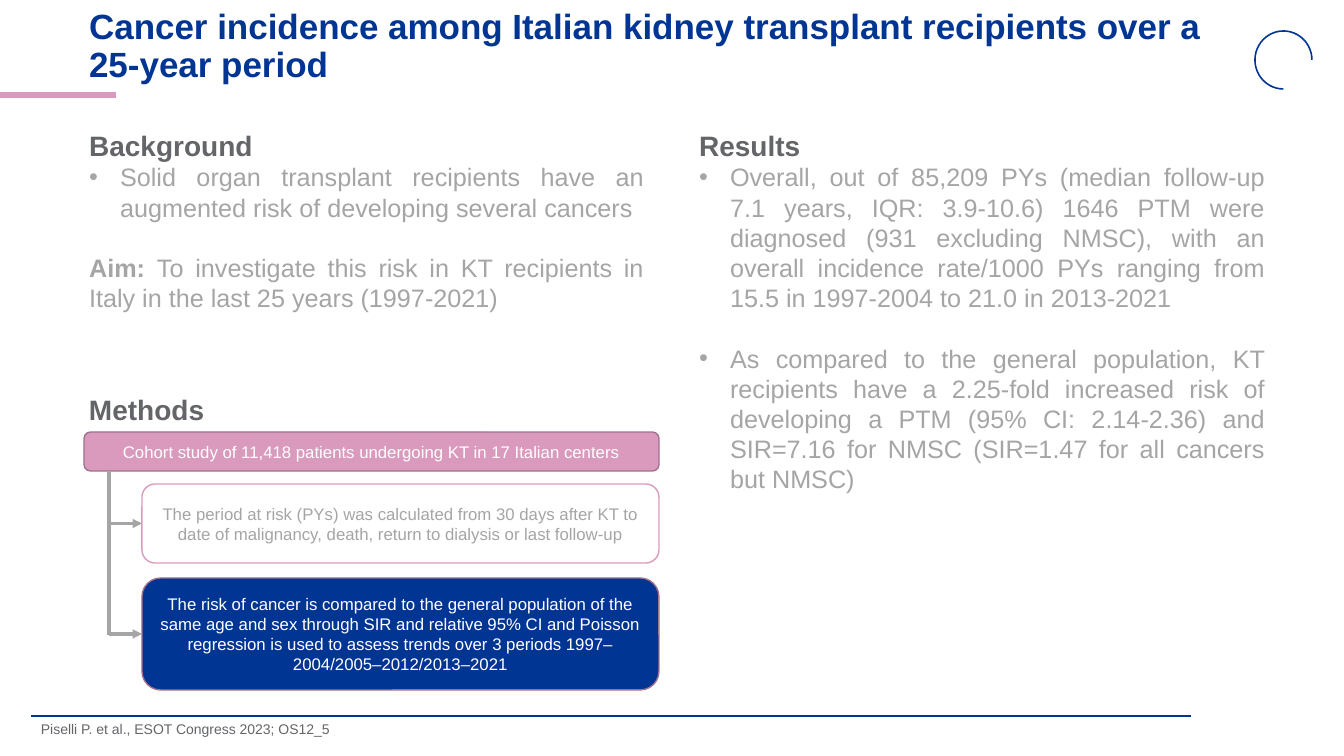
from dataclasses import dataclass

from lxml.etree import SubElement
from pptx import Presentation
from pptx.dml.color import RGBColor
from pptx.enum.shapes import MSO_CONNECTOR, MSO_SHAPE
from pptx.enum.text import MSO_ANCHOR, MSO_AUTO_SIZE, PP_ALIGN
from pptx.oxml.ns import qn
from pptx.util import Pt

# Content: a paragraph is (kind, [(text, bold), ...])
TITLE = "Cancer incidence among Italian kidney transplant recipients over a 25-year period"
CITATION = "Piselli P. et al., ESOT Congress 2023; OS12_5"
BACKGROUND = [
    ("heading", [("Background", True)]),
    ("bullet", [("Solid organ transplant recipients have an augmented risk of "
                 "developing several cancers", False)]),
    ("plain", [("Aim: ", True),
               ("To investigate this risk in KT recipients in Italy in the last "
                "25 years (1997-2021)", False)]),
]
METHODS = [("heading", [("Methods", True)])]
RESULTS = [
    ("heading", [("Results", True)]),
    ("bullet", [("Overall, out of 85,209 PYs (median follow-up 7.1 years, IQR: 3.9-10.6) "
                 "1646 PTM were diagnosed (931 excluding NMSC), with an overall incidence "
                 "rate/1000 PYs ranging from 15.5 in 1997-2004 to 21.0 in 2013-2021", False)]),
    ("bullet", [("As compared to the general population, KT recipients have a 2.25-fold "
                 "increased risk of developing a PTM (95% CI: 2.14-2.36) and SIR=7.16 for "
                 "NMSC (SIR=1.47 for all cancers but NMSC)", False)]),
]
COHORT = "Cohort study of 11,418 patients undergoing KT in 17 Italian centers"
# Step: top, height, fill, outline, text colour, text
STEPS = [
    (484, 79, None, "pink", "light_grey",
     "The period at risk (PYs) was calculated from 30 days after KT to date of "
     "malignancy, death, return to dialysis or last follow-up"),
    (578, 112, "blue", "mauve", "white",
     "The risk of cancer is compared to the general population of the same age and sex "
     "through SIR and relative 95% CI and Poisson regression is used to assess trends "
     "over 3 periods 1997‒2004/2005‒2012/2013‒2021"),
]


@dataclass(frozen=True)
class Theme:
    font: str = "Arial"
    blue: RGBColor = RGBColor(0x00, 0x35, 0x94)
    pink: RGBColor = RGBColor(0xDA, 0x9A, 0xBD)
    mauve: RGBColor = RGBColor(0xA1, 0x72, 0x8C)
    dark_grey: RGBColor = RGBColor(0x63, 0x65, 0x69)
    light_grey: RGBColor = RGBColor(0xA5, 0xA5, 0xA5)
    white: RGBColor = RGBColor(0xFF, 0xFF, 0xFF)
    title_size: int = 25
    heading_size: int = 20
    body_size: int = 18
    step_size: int = 12
    citation_size: int = 10


THEME = Theme()

# Geometry in px
SCALE = 914400 / 100.8
SLIDE_WIDTH, SLIDE_HEIGHT = 1344, 756
TEXT_LEFT = 79
STEP_LEFT, STEP_RIGHT = 142, 659
COHORT_LEFT, COHORT_TOP, COHORT_HEIGHT = 84, 432, 39
TRUNK_X = 109
BULLET_INDENT = 31
PARAGRAPH_GAP = 30


def px(length):
    return round(length * SCALE)


def place(shape, left, top, width, height):
    shape.left, shape.top = px(left), px(top)
    shape.width, shape.height = px(width), px(height)


def format_runs(paragraph, size, color, bold=False):
    for run in paragraph.runs:
        run.font.name = THEME.font
        run.font.size = Pt(size)
        run.font.bold = bold
        run.font.color.rgb = color


def set_bullet(paragraph, bulleted):
    properties = paragraph._p.get_or_add_pPr()
    indent = px(BULLET_INDENT) if bulleted else 0
    properties.set("marL", str(indent))
    properties.set("indent", str(-indent))
    if bulleted:
        SubElement(properties, qn("a:buFont")).set("typeface", THEME.font)
        SubElement(properties, qn("a:buChar")).set("char", "•")
    else:
        SubElement(properties, qn("a:buNone"))


def fill_frame(text_frame, paragraphs):
    text_frame.word_wrap = True
    text_frame.auto_size = MSO_AUTO_SIZE.NONE
    for index, (kind, pieces) in enumerate(paragraphs):
        paragraph = text_frame.add_paragraph() if index else text_frame.paragraphs[0]
        set_bullet(paragraph, kind == "bullet")
        paragraph.alignment = PP_ALIGN.JUSTIFY
        paragraph.space_before = px(PARAGRAPH_GAP) if index > 1 else 0
        heading = kind == "heading"
        for text, bold in pieces:
            run = paragraph.add_run()
            run.text = text
            run.font.name = THEME.font
            run.font.bold = bold
            run.font.size = Pt(THEME.heading_size if heading else THEME.body_size)
            run.font.color.rgb = THEME.dark_grey if heading else THEME.light_grey


def add_box(slide, bounds, fill, outline, color, text):
    box = slide.shapes.add_shape(MSO_SHAPE.FLOWCHART_ALTERNATE_PROCESS, *map(px, bounds))
    box.shadow.inherit = False
    if fill is None:
        box.fill.background()
    else:
        box.fill.solid()
        box.fill.fore_color.rgb = fill
    box.line.color.rgb = outline
    box.line.width = Pt(1)
    frame = box.text_frame
    frame.word_wrap = True
    frame.vertical_anchor = MSO_ANCHOR.MIDDLE
    frame.text = text
    frame.paragraphs[0].alignment = PP_ALIGN.CENTER
    format_runs(frame.paragraphs[0], THEME.step_size, color)
    return box


def add_line(slide, points, color, width, arrow=False):
    line = slide.shapes.add_connector(MSO_CONNECTOR.STRAIGHT, *map(px, points))
    line.line.color.rgb = color
    line.line.width = Pt(width)
    properties = line._element.spPr
    if arrow:
        SubElement(properties.find(qn("a:ln")), qn("a:tailEnd")).set("type", "triangle")
    SubElement(properties, qn("a:effectLst"))
    return line


def main():
    presentation = Presentation()
    presentation.slide_width, presentation.slide_height = px(SLIDE_WIDTH), px(SLIDE_HEIGHT)
    slide = presentation.slides.add_slide(presentation.slide_layouts.get_by_name("Two Content"))

    # Decoration
    add_line(slide, (0, 95, 116, 95), THEME.pink, 4.5)
    add_line(slide, (31, 716, 1191, 716), THEME.blue, 1.5)
    arc = slide.shapes.add_shape(MSO_SHAPE.ARC, *map(px, (1255, 31, 57, 58)))
    arc.adjustments[0], arc.adjustments[1] = 54, 0
    arc.shadow.inherit = False
    arc.fill.background()
    arc.line.color.rgb = THEME.blue
    arc.line.width = Pt(1.13)

    # Title
    title = slide.shapes.title
    place(title, TEXT_LEFT, 10, 1159, 74)
    title.text_frame.text = TITLE
    title.text_frame.auto_size = MSO_AUTO_SIZE.NONE
    title.text_frame.vertical_anchor = MSO_ANCHOR.MIDDLE
    heading = title.text_frame.paragraphs[0]
    heading.alignment = PP_ALIGN.LEFT
    heading.line_spacing = 0.9
    format_runs(heading, THEME.title_size, THEME.blue, bold=True)

    # Text columns
    background, results = slide.placeholders[1], slide.placeholders[2]
    place(background, TEXT_LEFT, 123, 575, 197)
    place(results, 689, 123, 586, 407)
    fill_frame(background.text_frame, BACKGROUND)
    fill_frame(results.text_frame, RESULTS)

    # Methods diagram
    methods = slide.shapes.add_textbox(*map(px, (TEXT_LEFT, 388, 148, 44)))
    fill_frame(methods.text_frame, METHODS)
    cohort_bounds = (COHORT_LEFT, COHORT_TOP, STEP_RIGHT - COHORT_LEFT, COHORT_HEIGHT)
    add_box(slide, cohort_bounds, THEME.pink, THEME.mauve, THEME.white, COHORT)
    for top, height, fill, outline, color, text in STEPS:
        box = add_box(slide, (STEP_LEFT, top, STEP_RIGHT - STEP_LEFT, height),
                      fill and getattr(THEME, fill), getattr(THEME, outline),
                      getattr(THEME, color), text)
        middle = top + height / 2
        arrow = add_line(slide, (TRUNK_X, middle, STEP_LEFT, middle),
                         THEME.light_grey, 2.25, arrow=True)
        arrow.end_connect(box, 1)
    add_line(slide, (TRUNK_X, COHORT_TOP + COHORT_HEIGHT, TRUNK_X, middle + 1),
             THEME.light_grey, 2.25)

    # Citation
    citation = slide.shapes.add_textbox(*map(px, (31, 717, 790, 34)))
    citation.text_frame.word_wrap = True
    citation.text_frame.text = CITATION
    citation.text_frame.paragraphs[0].line_spacing = 0.9
    format_runs(citation.text_frame.paragraphs[0], THEME.citation_size, THEME.dark_grey)

    presentation.save("out.pptx")


if __name__ == "__main__":
    main()
